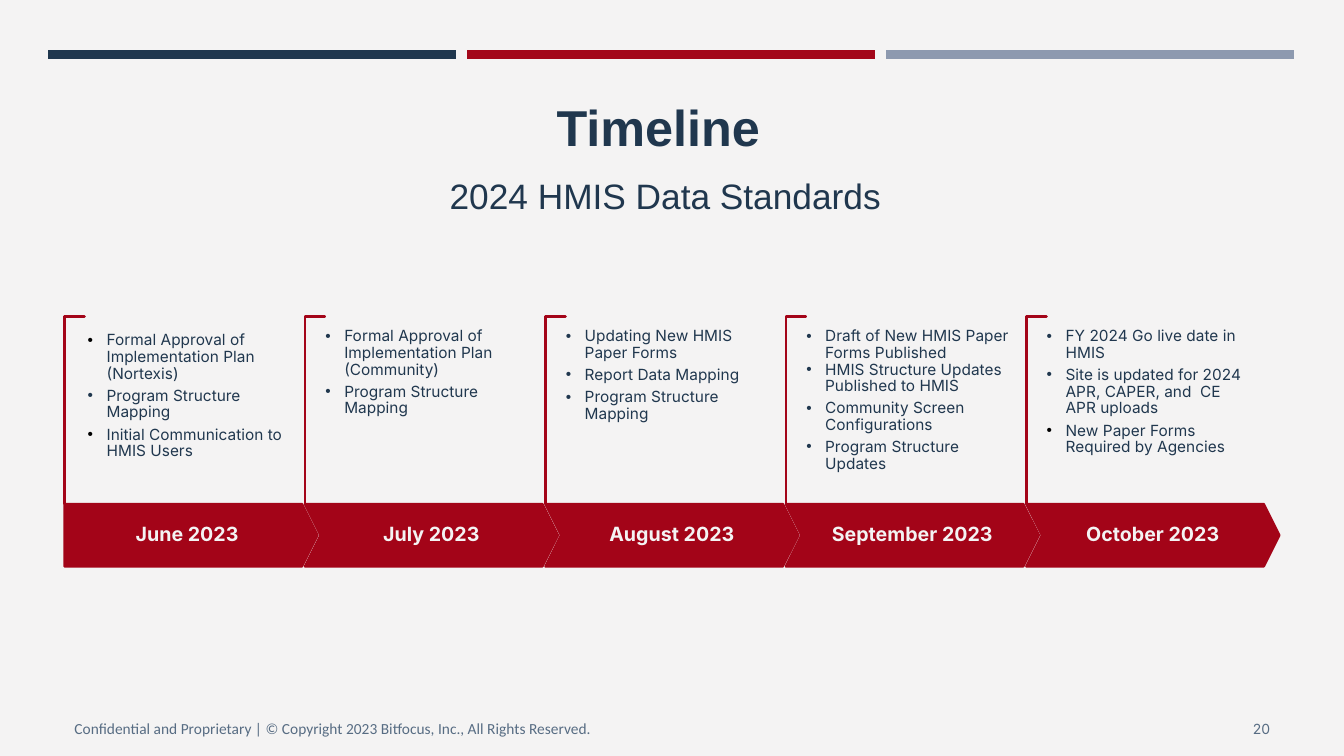
from dataclasses import dataclass

from lxml.etree import SubElement
from pptx import Presentation
from pptx.dml.color import RGBColor
from pptx.enum.shapes import MSO_CONNECTOR as Connector, MSO_SHAPE as Preset
from pptx.enum.text import MSO_ANCHOR as Anchor, PP_ALIGN as Align
from pptx.oxml.ns import qn
from pptx.shapes.autoshape import Shape
from pptx.slide import Slide
from pptx.text.text import TextFrame, _Paragraph as Paragraph
from pptx.util import Pt


@dataclass(frozen=True)
class Theme:
    background: str = "F4F3F3"
    navy: str = "20374E"
    bar_red: str = "A3071A"
    bar_blue: str = "8D99AF"
    red: str = "A30418"
    bracket_fill: str = "F3F2F2"
    muted: str = "576C83"
    black: str = "000000"
    heading_font: str = "Arial"
    body_font: str = "Inter"
    footer_font: str = "Calibri"
    title_size: float = 36
    subtitle_size: float = 25.2
    month_size: float = 14
    body_size: float = 11
    page_size: float = 10
    outline: float = 1.75
    bar_weight: float = 6.5


@dataclass(frozen=True)
class Box:
    left: float
    top: float
    width: float
    height: float

    def lengths(self) -> tuple[Pt, Pt, Pt, Pt]:
        return Pt(self.left), Pt(self.top), Pt(self.width), Pt(self.height)


@dataclass(frozen=True)
class Task:
    text: str
    bullet: str = Theme.navy
    gap: float = 3.9


@dataclass(frozen=True)
class Milestone:
    month: str
    tasks: tuple[Task, ...]
    banner: Preset = Preset.CHEVRON
    inset: float = 14.6
    tasks_top: float = 234.7


THEME = Theme()

# Timeline geometry
TIMELINE_LEFT, STEP = 46.1, 171.75
BANNER_TOP, BANNER_WIDTH, BANNER_HEIGHT = 360, 180.7, 44.6
BRACKET_RISE, BRACKET_ARM = 133.9, 14.4
TASKS_WIDTH, TASK_INDENT = 146.9, 13.5

MILESTONES = (
    Milestone("June 2023", (
        Task("Formal Approval of Implementation Plan (Nortexis)", THEME.black),
        Task("Program Structure Mapping"),
        Task("Initial Communication to HMIS Users", THEME.black),
    ), Preset.PENTAGON, 16.6, 237.6),
    Milestone("July 2023", (
        Task("Formal Approval of Implementation Plan (Community)"),
        Task("Program Structure Mapping"),
    )),
    Milestone("August 2023", (
        Task("Updating New HMIS Paper Forms"),
        Task("Report Data Mapping"),
        Task("Program Structure Mapping"),
    )),
    Milestone("September 2023", (
        Task("Draft of New HMIS Paper Forms Published"),
        Task("HMIS Structure Updates Published to HMIS", gap=0),
        Task("Community Screen Configurations"),
        Task("Program Structure Updates"),
    )),
    Milestone("October 2023", (
        Task("FY 2024 Go live date in HMIS"),
        Task("Site is updated for 2024 APR, CAPER, and  CE APR uploads"),
        Task("New Paper Forms Required by Agencies", THEME.black),
    )),
)


def rgb(color: str) -> RGBColor:
    return RGBColor.from_string(color)


def write(paragraph: Paragraph, text: str, font: str, size: float, color: str,
          bold: bool = False) -> None:
    run = paragraph.add_run()
    run.text = text
    run.font.name, run.font.size, run.font.bold = font, Pt(size), bold
    run.font.color.rgb = rgb(color)


def set_frame(frame: TextFrame, anchor: Anchor, side: float, end: float) -> None:
    frame.word_wrap = True
    frame.vertical_anchor = anchor
    frame.margin_left = frame.margin_right = Pt(side)
    frame.margin_top = frame.margin_bottom = Pt(end)


def add_text(slide: Slide, box: Box, anchor: Anchor, side: float = 7.2,
             end: float = 3.6) -> TextFrame:
    frame = slide.shapes.add_textbox(*box.lengths()).text_frame
    set_frame(frame, anchor, side, end)
    return frame


def add_outlined(slide: Slide, preset: Preset, box: Box, fill: str,
                 adjustments: tuple[float, ...]) -> Shape:
    shape = slide.shapes.add_shape(preset, *box.lengths())
    shape.shadow.inherit = False
    shape.fill.solid()
    shape.fill.fore_color.rgb = rgb(fill)
    shape.line.color.rgb = rgb(THEME.red)
    shape.line.width = Pt(THEME.outline)
    for index, value in enumerate(adjustments):
        shape.adjustments[index] = value
    return shape


def add_bar(slide: Slide, left: float, color: str) -> None:
    bar = slide.shapes.add_connector(
        Connector.STRAIGHT, Pt(left), Pt(38.9), Pt(left + 291.6), Pt(38.9))
    bar.line.color.rgb = rgb(color)
    bar.line.width = Pt(THEME.bar_weight)
    SubElement(bar._element.spPr, qn("a:effectLst"))


def add_bullet(paragraph: Paragraph, color: str) -> None:
    properties = paragraph._p.get_or_add_pPr()
    properties.set("marL", str(Pt(TASK_INDENT)))
    properties.set("indent", str(-Pt(TASK_INDENT)))
    bullet_color = SubElement(properties, qn("a:buClr"))
    SubElement(bullet_color, qn("a:srgbClr"), val=color)
    SubElement(properties, qn("a:buFont"), typeface="Arial")
    SubElement(properties, qn("a:buChar"), char="•")


def add_title(slide: Slide) -> None:
    frame = add_text(slide, Box(46.1, 82.8, 868.3, 75.5), Anchor.BOTTOM)
    lines = (("Timeline", THEME.title_size, True, 20, 0),
             ("2024 HMIS Data Standards", THEME.subtitle_size, False, 10, 12.4))
    for index, (text, size, bold, right_margin, gap) in enumerate(lines):
        line = frame.add_paragraph() if index else frame.paragraphs[0]
        line.alignment = Align.CENTER
        line._p.get_or_add_pPr().set("marR", str(Pt(right_margin)))
        if index:
            line.space_before = Pt(gap)
        write(line, text, THEME.heading_font, size, THEME.navy, bold)


def add_milestone(slide: Slide, left: float, milestone: Milestone) -> None:
    # Bracket: a thin corner turned a quarter about its centre
    bracket = add_outlined(
        slide, Preset.CORNER,
        Box(left + (BRACKET_ARM - BRACKET_RISE) / 2,
            BANNER_TOP - (BRACKET_RISE + BRACKET_ARM) / 2,
            BRACKET_RISE, BRACKET_ARM),
        THEME.bracket_fill, (0.01, 0.01))
    bracket.rotation = 90

    # Month banner
    banner = add_outlined(
        slide, milestone.banner,
        Box(left, BANNER_TOP, BANNER_WIDTH, BANNER_HEIGHT), THEME.red, (0.25,))
    set_frame(banner.text_frame, Anchor.MIDDLE, 7.2, 13.5)
    month = banner.text_frame.paragraphs[0]
    month.alignment, month.line_spacing = Align.CENTER, 0.9
    write(month, milestone.month, THEME.body_font, THEME.month_size,
          THEME.background, True)

    # Task list
    frame = add_text(slide, Box(left + milestone.inset, milestone.tasks_top,
                                TASKS_WIDTH, 120), Anchor.TOP, 0, 0)
    for index, task in enumerate(milestone.tasks):
        line = frame.add_paragraph() if index else frame.paragraphs[0]
        add_bullet(line, task.bullet)
        line.line_spacing = 0.9
        if index:
            line.space_before = Pt(task.gap)
        write(line, task.text, THEME.body_font, THEME.body_size, THEME.navy)


def add_footer(slide: Slide) -> None:
    notice = add_text(slide, Box(46.1, 506.2, 544.3, 28.8), Anchor.MIDDLE)
    write(notice.paragraphs[0],
          "Confidential and Proprietary | © Copyright 2023 Bitfocus, Inc., All Rights Reserved.",
          THEME.footer_font, THEME.body_size, THEME.muted)
    page = add_text(slide, Box(831.6, 506.2, 82.8, 28.8), Anchor.MIDDLE).paragraphs[0]
    page.alignment = Align.RIGHT
    write(page, "20", THEME.body_font, THEME.page_size, THEME.muted)


def main() -> None:
    deck = Presentation()
    deck.slide_width, deck.slide_height = Pt(960), Pt(540)
    slide = deck.slides.add_slide(deck.slide_layouts[6])
    slide.background.fill.solid()
    slide.background.fill.fore_color.rgb = rgb(THEME.background)
    for index, color in enumerate((THEME.navy, THEME.bar_red, THEME.bar_blue)):
        add_bar(slide, 34.4 + index * 299.3, color)
    add_title(slide)
    add_footer(slide)
    for index, milestone in enumerate(MILESTONES):
        add_milestone(slide, TIMELINE_LEFT + index * STEP, milestone)
    deck.save("out.pptx")


if __name__ == "__main__":
    main()
